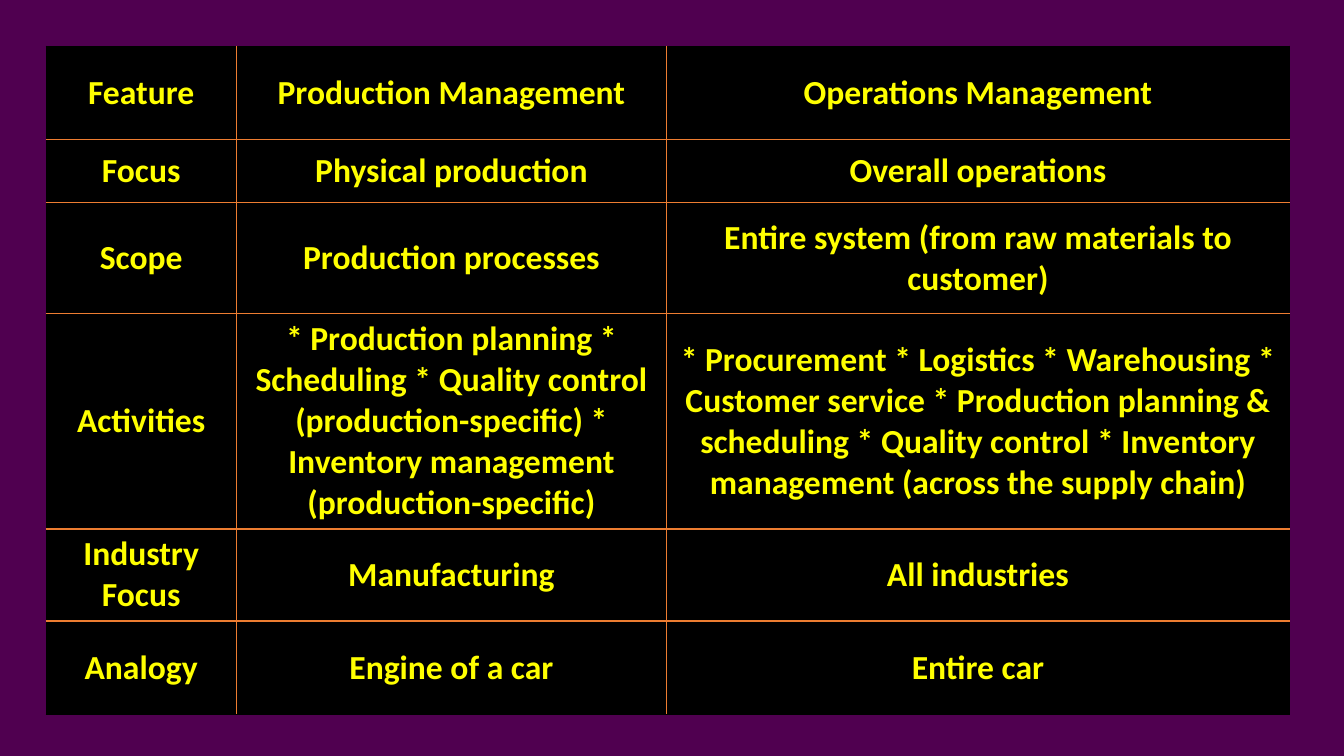
from dataclasses import dataclass

import pptx
import pptx.dml.color
import pptx.enum.text
import pptx.oxml
import pptx.oxml.ns
import pptx.table
import pptx.util

EMU_PER_PX = 9525
RGB = pptx.dml.color.RGBColor.from_string


@dataclass(frozen=True)
class Theme:
    background: str = "500050"
    cell: str = "000000"
    text: str = "FFFF00"
    outer_line: str = "000000"
    inner_line: str = "ED7D31"
    font: str = "Calibri"
    text_pt: int = 24
    line_pt: int = 1


@dataclass(frozen=True)
class ComparisonRow:
    height: int
    feature: str
    production: str
    operations: str


THEME = Theme()
COLUMN_WIDTHS = (181, 410, 593)
TABLE_LEFT, TABLE_TOP, TABLE_HEIGHT = 44, 44, 632
COMPARISON = (
    ComparisonRow(89, "Feature", "Production Management", "Operations Management"),
    ComparisonRow(60, "Focus", "Physical production", "Overall operations"),
    ComparisonRow(106, "Scope", "Production processes",
                  "Entire system (from raw materials to customer)"),
    ComparisonRow(200, "Activities",
                  "* Production planning * Scheduling * Quality control "
                  "(production-specific) * Inventory management (production-specific)",
                  "* Procurement * Logistics * Warehousing * Customer service "
                  "* Production planning & scheduling * Quality control "
                  "* Inventory management (across the supply chain)"),
    ComparisonRow(71, "Industry Focus", "Manufacturing", "All industries"),
    ComparisonRow(89, "Analogy", "Engine of a car", "Entire car"),
)


def px(length: int) -> pptx.util.Emu:
    return pptx.util.Emu(length * EMU_PER_PX)


def set_borders(cell: pptx.table._Cell, outer_sides: dict[str, bool]) -> None:
    """Draw the four borders; sides on the table's edge take the outer colour."""
    properties = cell._tc.get_or_add_tcPr()
    for position, (side, is_outer) in enumerate(outer_sides.items()):
        color = THEME.outer_line if is_outer else THEME.inner_line
        border = pptx.oxml.parse_xml(
            f'<a:ln{side} {pptx.oxml.ns.nsdecls("a")} w="{pptx.util.Pt(THEME.line_pt)}">'
            f'<a:solidFill><a:srgbClr val="{color}"/></a:solidFill></a:ln{side}>'
        )
        properties.insert(position, border)


def fill_cell(cell: pptx.table._Cell, wording: str) -> None:
    cell.fill.solid()
    cell.fill.fore_color.rgb = RGB(THEME.cell)
    cell.vertical_anchor = pptx.enum.text.MSO_ANCHOR.MIDDLE
    paragraph = cell.text_frame.paragraphs[0]
    paragraph.text = wording
    paragraph.alignment = pptx.enum.text.PP_ALIGN.CENTER
    font = paragraph.runs[0].font
    font.name = THEME.font
    font.size = pptx.util.Pt(THEME.text_pt)
    font.bold = True
    font.color.rgb = RGB(THEME.text)


def main() -> None:
    presentation = pptx.Presentation()
    presentation.slide_width, presentation.slide_height = px(1280), px(720)
    slide = presentation.slides.add_slide(presentation.slide_layouts[6])
    slide.background.fill.solid()
    slide.background.fill.fore_color.rgb = RGB(THEME.background)

    frame = slide.shapes.add_table(
        len(COMPARISON), len(COLUMN_WIDTHS), px(TABLE_LEFT), px(TABLE_TOP),
        px(sum(COLUMN_WIDTHS)), px(TABLE_HEIGHT),
    )
    comparison = frame.table
    comparison.horz_banding = False
    for column, width in zip(comparison.columns, COLUMN_WIDTHS):
        column.width = px(width)

    last_row, last_column = len(COMPARISON) - 1, len(COLUMN_WIDTHS) - 1
    for r, entry in enumerate(COMPARISON):
        comparison.rows[r].height = px(entry.height)
        for c, wording in enumerate((entry.feature, entry.production, entry.operations)):
            cell = comparison.cell(r, c)
            fill_cell(cell, wording)
            set_borders(cell, {"L": c == 0, "R": c == last_column,
                               "T": r == 0, "B": r == last_row})
    frame.height = px(TABLE_HEIGHT)
    presentation.save("out.pptx")


if __name__ == "__main__":
    main()
